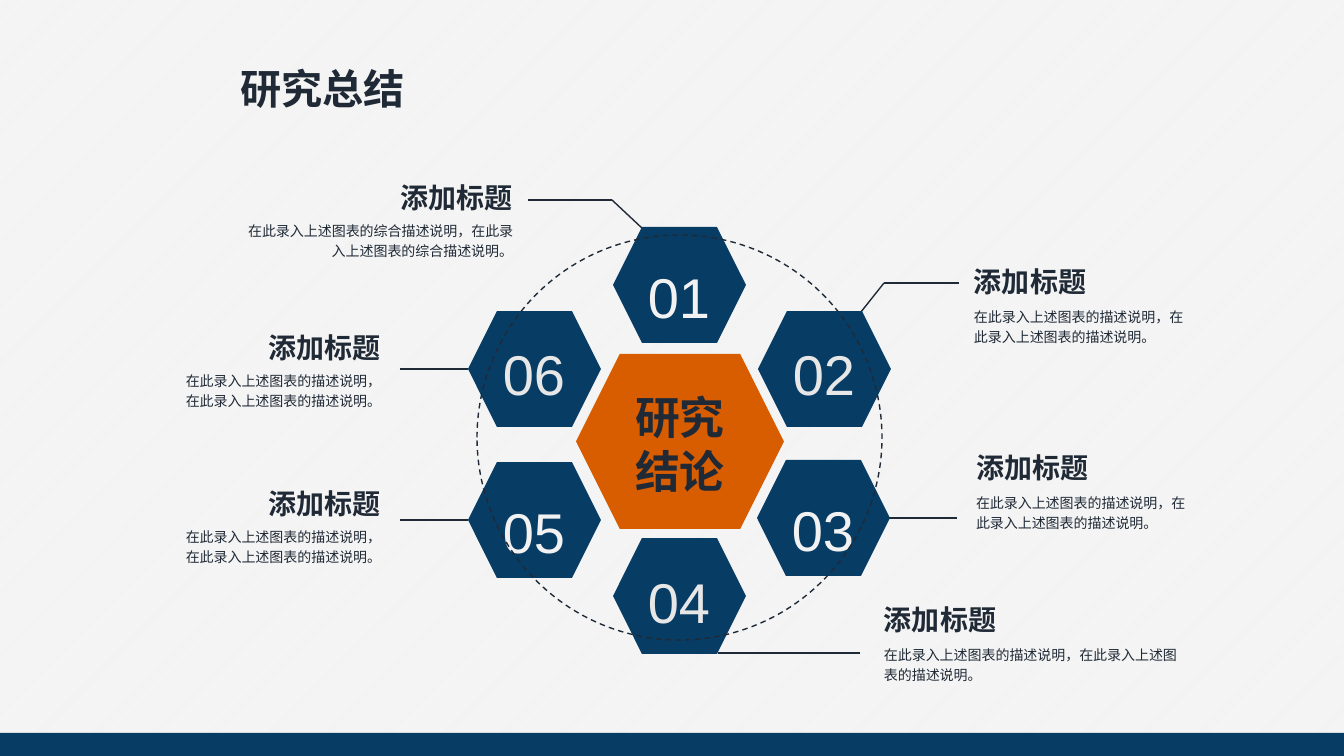
import itertools

import lxml.etree
import pptx
import pptx.dml.color
import pptx.enum.dml
import pptx.enum.shapes
import pptx.enum.text
import pptx.oxml.ns
import pptx.util

SCALE = 914400 / 100.8
COLORS = {
    "ink": "202A36",
    "navy": "073C65",
    "orange": "D85C00",
    "odd": "F2F2F2",
    "even": "E7E7E7",
    "white": "FFFFFF",
    "paper": "F2F2F2",
}
CJK_FONT = "Noto Sans CJK SC"
ALIGN = pptx.enum.text.PP_ALIGN
ANCHOR = pptx.enum.text.MSO_ANCHOR
SHAPES = pptx.enum.shapes.MSO_SHAPE
HEXAGON_WIDTH, HEXAGON_HEIGHT = 133, 116
HEADING_WIDTH, HEADING_HEIGHT = 133, 44
HEADING = "添加标题"
SUMMARY = "在此录入上述图表的描述说明，在此录入上述图表的描述说明。"
LONG_SUMMARY = "在此录入上述图表的综合描述说明，在此录入上述图表的综合描述说明。"

# Each node: hexagon corner, leader points, callout box (left, top, width), side, text
NODES = [
    ((613, 227), [(643, 229), (612, 200), (528, 200)], (232, 174, 291), "left", LONG_SUMMARY),
    ((758, 311), [(861, 312), (884, 283), (959, 283)], (964, 258, 236), "right", SUMMARY),
    ((757, 460), [(889, 518), (957, 518)], (966, 444, 236), "right", SUMMARY),
    ((613, 538), [(718, 653), (860, 653)], (874, 596, 315), "right", SUMMARY),
    ((468, 462), [(468, 520), (400, 520)], (171, 480, 220), "left", SUMMARY),
    ((468, 311), [(468, 369), (400, 369)], (171, 324, 220), "left", SUMMARY),
]


def px(length):
    """Turn pixels into EMU."""
    return pptx.util.Emu(round(length * SCALE))


def color(name):
    """Look up a colour by name."""
    return pptx.dml.color.RGBColor.from_string(COLORS[name])


def write(shape, text, size, font=CJK_FONT, ink="ink", bold=False, align=ALIGN.LEFT,
          spacing=None, wrap=True, anchor=ANCHOR.TOP, insets=(10, 5, 10, 5)):
    """Write one formatted paragraph into a shape."""
    frame = shape.text_frame
    frame.word_wrap = wrap
    frame.auto_size = pptx.enum.text.MSO_AUTO_SIZE.NONE
    frame.vertical_anchor = anchor
    frame.margin_left, frame.margin_top, frame.margin_right, frame.margin_bottom = map(px, insets)
    paragraph = frame.paragraphs[0]
    paragraph.alignment = align
    paragraph.space_before = pptx.util.Pt(0)
    paragraph.line_spacing = spacing
    run = paragraph.add_run()
    run.text = text
    run.font.size = pptx.util.Pt(size)
    run.font.bold = bold
    run.font.color.rgb = color(ink)
    run.font.name = font
    lxml.etree.SubElement(run._r.get_or_add_rPr(), pptx.oxml.ns.qn("a:ea"), typeface=CJK_FONT)


def add_label(slide, box, text, **style):
    """Add a text box in the given box."""
    write(slide.shapes.add_textbox(*map(px, box)), text, **style)


def add_block(slide, kind, box, fill):
    """Add a filled preset shape without outline."""
    shape = slide.shapes.add_shape(kind, *map(px, box))
    shape.shadow.inherit = False
    shape.fill.solid()
    shape.fill.fore_color.rgb = color(fill)
    shape.line.fill.background()


def add_leader(slide, points):
    """Join the points with straight lines."""
    for start, end in itertools.pairwise(points):
        connector = slide.shapes.add_connector(
            pptx.enum.shapes.MSO_CONNECTOR.STRAIGHT, *map(px, start + end))
        connector.line.color.rgb = color("ink")
        connector.line.width = pptx.util.Pt(1)
        lxml.etree.SubElement(connector._element.spPr, pptx.oxml.ns.qn("a:effectLst"))


def add_node(slide, corner, number):
    """Add a numbered hexagon at the given corner."""
    left, top = corner
    odd = number % 2 == 1
    add_block(slide, SHAPES.HEXAGON, (left, top, HEXAGON_WIDTH, HEXAGON_HEIGHT), "navy")
    add_label(slide, (left + 20, top + (12 if odd else 19), 92, 84 if odd else 78),
              f"{number:02d}", size=40, font="Arial", ink="odd" if odd else "even",
              align=ALIGN.CENTER, spacing=1.2 if odd else 1.0, insets=(0, 10, 0, 0))


def add_callout(slide, box, side, text):
    """Add a heading and its description in the given box."""
    left, top, width = box
    on_left = side == "left"
    align = ALIGN.RIGHT if on_left else ALIGN.LEFT
    heading_left = left + width - HEADING_WIDTH if on_left else left
    add_label(slide, (heading_left, top, HEADING_WIDTH, HEADING_HEIGHT), HEADING, size=20,
              bold=True, align=align, spacing=pptx.util.Pt(25), wrap=False)
    add_label(slide, (left, top + (40 if on_left else 42), width, 50), text, size=10,
              align=align, spacing=pptx.util.Pt(14.4))


def add_center(slide, box):
    """Add the central hexagon with its conclusion label."""
    left, top, width, height = box
    add_block(slide, SHAPES.HEXAGON, box, "orange")
    add_label(slide, (left + 40, top + 29, width - 80, height - 54), "研究结论", size=32,
              bold=True, align=ALIGN.CENTER, spacing=pptx.util.Pt(38.5),
              anchor=ANCHOR.MIDDLE, insets=(0, 0, 0, 0))


def add_ring(slide, box):
    """Add the dashed circle through the hexagons."""
    ring = slide.shapes.add_shape(SHAPES.OVAL, *map(px, box))
    ring.shadow.inherit = False
    ring.fill.background()
    ring.line.color.rgb = color("ink")
    ring.line.width = pptx.util.Pt(1)
    ring.line.dash_style = pptx.enum.dml.MSO_LINE.DASH


def add_title(slide, box):
    """Place and format the title placeholder."""
    title = slide.shapes.title
    title.left, title.top, title.width, title.height = map(px, box)
    write(title, "研究总结", size=29.4, font="Arial", bold=True,
          spacing=pptx.util.Pt(37), wrap=False)


def set_background(slide):
    """Fill the background with light diagonal stripes."""
    fill = slide.background.fill
    fill.patterned()
    fill.pattern = pptx.enum.dml.MSO_PATTERN.LIGHT_UPWARD_DIAGONAL
    fill.fore_color.rgb = color("white")
    fill.back_color.rgb = color("paper")


def main():
    """Build the summary slide and save it."""
    presentation = pptx.Presentation()
    presentation.slide_width, presentation.slide_height = px(1344), px(756)
    slide = presentation.slides.add_slide(presentation.slide_layouts[5])
    set_background(slide)
    add_title(slide, (230, 56, 186, 59))
    for number, (corner, points, box, side, text) in enumerate(NODES, 1):
        add_leader(slide, points)
        add_node(slide, corner, number)
        add_callout(slide, box, side, text)
    add_center(slide, (576, 354, 208, 175))
    add_ring(slide, (477, 235, 405, 405))
    add_block(slide, SHAPES.RECTANGLE, (0, 733, 1344, 23), "navy")
    presentation.save("out.pptx")


if __name__ == "__main__":
    main()
